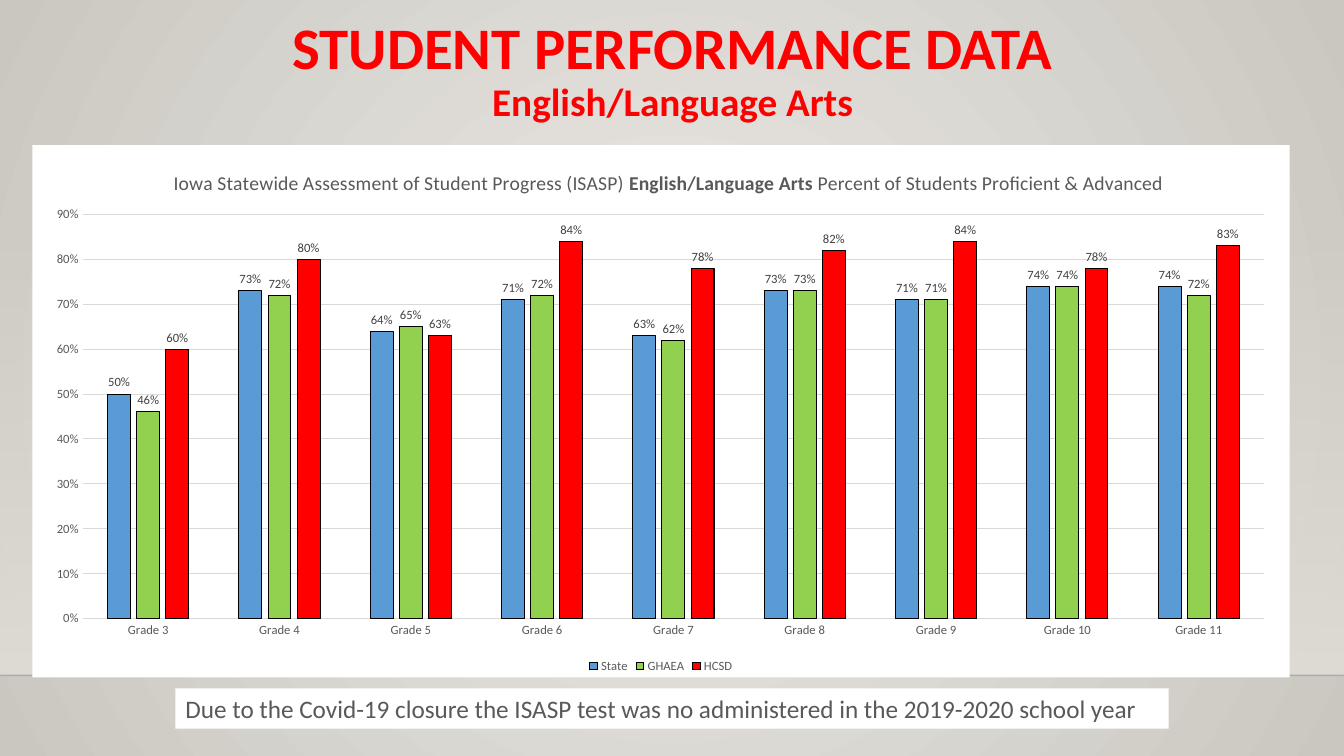
from lxml import etree
from pptx import Presentation
from pptx.chart.data import CategoryChartData
from pptx.dml.color import RGBColor
from pptx.enum.chart import XL_CHART_TYPE, XL_LABEL_POSITION, XL_LEGEND_POSITION, XL_TICK_MARK
from pptx.enum.shapes import MSO_CONNECTOR, MSO_SHAPE
from pptx.enum.text import MSO_ANCHOR, MSO_AUTO_SIZE, PP_ALIGN
from pptx.oxml.ns import qn
from pptx.util import Inches, Pt

CLUSTERED = XL_CHART_TYPE.COLUMN_CLUSTERED
OUTSIDE_END = XL_LABEL_POSITION.OUTSIDE_END
LEGEND_BOTTOM = XL_LEGEND_POSITION.BOTTOM
NO_TICK = XL_TICK_MARK.NONE
STRAIGHT = MSO_CONNECTOR.STRAIGHT
RECTANGLE = MSO_SHAPE.RECTANGLE
MIDDLE = MSO_ANCHOR.MIDDLE
CENTER = PP_ALIGN.CENTER
NO_AUTOFIT = MSO_AUTO_SIZE.NONE
GROW = MSO_AUTO_SIZE.SHAPE_TO_FIT_TEXT

FONT = "Calibri"
RED = RGBColor(0xFF, 0x00, 0x00)
BLUE = RGBColor(0x5B, 0x9B, 0xD5)
GREEN = RGBColor(0x92, 0xD0, 0x50)
WHITE = RGBColor(0xFF, 0xFF, 0xFF)
BLACK = RGBColor(0x00, 0x00, 0x00)
GREY_TEXT = RGBColor(0x59, 0x59, 0x59)
LABEL_TEXT = RGBColor(0x40, 0x40, 0x40)
GRID = RGBColor(0xD9, 0xD9, 0xD9)
GLOW = RGBColor(0xEC, 0xEA, 0xE7)
EDGE = RGBColor(0xCA, 0xC7, 0xC1)
FLOOR = RGBColor(0xDF, 0xDB, 0xD5)

WIDTH, HEIGHT = 13.33, 7.5
GRADES = [f"Grade {number}" for number in range(3, 12)]
RESULTS = [
    ("State", BLUE, (50, 73, 64, 71, 63, 73, 71, 74, 74)),
    ("GHAEA", GREEN, (46, 72, 65, 72, 62, 73, 71, 74, 72)),
    ("HCSD", RED, (60, 80, 63, 84, 78, 82, 84, 78, 83)),
]
CHART_TITLE = [
    ("Iowa Statewide Assessment of Student Progress (ISASP) ", False),
    ("English/Language Arts", True),
    (" Percent of Students Proficient & Advanced", False),
]
NOTE = ("Due to the Covid-19 closure the ISASP test was no administered "
        "in the 2019-2020 school year")


def style_font(font, size, color, bold=False):
    font.name = FONT
    font.size = Pt(size)
    font.bold = bold
    font.color.rgb = color


def style_line(line, color, width=0.75):
    line.color.rgb = color
    line.width = Pt(width)


def set_stops(fill, colors):
    fill.gradient()
    for stop, color, position in zip(fill.gradient_stops, colors, (0, 1)):
        stop.color.rgb = color
        stop.position = position


def set_alpha(color_element, percent):
    etree.SubElement(color_element, qn("a:alpha"), val=str(percent * 1000))


def set_layout(parent, index, **shares):
    for old in parent.findall(qn("c:layout")):
        parent.remove(old)
    layout = etree.Element(qn("c:layout"))
    manual = etree.SubElement(layout, qn("c:manualLayout"))
    if "w" in shares:
        etree.SubElement(manual, qn("c:layoutTarget"), val="inner")
    for mode in ("xMode", "yMode"):
        etree.SubElement(manual, qn(f"c:{mode}"), val="edge")
    for name, share in shares.items():
        etree.SubElement(manual, qn(f"c:{name}"), val=str(share))
    parent.insert(index, layout)


def paint_background(page):
    fill = page.background.fill
    set_stops(fill, (GLOW, EDGE))
    gradient = page.background._cSld.find(".//" + qn("a:gradFill"))
    gradient.remove(gradient.find(qn("a:lin")))
    circle = etree.SubElement(gradient, qn("a:path"), path="circle")
    sides = dict.fromkeys("ltrb", "50000")
    etree.SubElement(circle, qn("a:fillToRect"), **sides)


def add_floor(page, top, height):
    band = page.shapes.add_shape(RECTANGLE, 0, Inches(top), Inches(WIDTH), Inches(height))
    band.shadow.inherit = False
    band.line.fill.background()
    set_stops(band.fill, (FLOOR, FLOOR))
    band.fill.gradient_angle = 270
    set_alpha(band.element.spPr.find(".//" + qn("a:srgbClr")), 0)

    bottom = Inches(top + height)
    rule = page.shapes.add_connector(STRAIGHT, 0, bottom, Inches(WIDTH), bottom)
    style_line(rule.line, BLACK, 1)
    properties = rule.element.spPr
    set_alpha(properties.find(".//" + qn("a:srgbClr")), 20)
    etree.SubElement(properties, qn("a:effectLst"))


def add_heading(page, box):
    title = page.shapes.title
    title.left, title.top, title.width, title.height = map(Inches, box)
    frame = title.text_frame
    frame.text = "STUDENT PERFORMANCE DATA\nEnglish/Language Arts"
    frame.word_wrap = True
    frame.auto_size = NO_AUTOFIT
    frame.vertical_anchor = MIDDLE
    for para, size in zip(frame.paragraphs, (42, 28)):
        para.alignment = CENTER
        para.line_spacing = 0.9
        para.space_before = Pt(0)
        style_font(para.runs[0].font, size, RED, True)


def style_axes(chart):
    for axis in (chart.category_axis, chart.value_axis):
        axis.major_tick_mark = axis.minor_tick_mark = NO_TICK
        style_font(axis.tick_labels.font, 9, GREY_TEXT)
    style_line(chart.category_axis.format.line, GRID)
    values = chart.value_axis
    values.format.line.fill.background()
    style_line(values.major_gridlines.format.line, GRID)
    values.minimum_scale, values.maximum_scale, values.major_unit = 0, 0.9, 0.1
    values.tick_labels.number_format = "0%"
    values.tick_labels.number_format_is_linked = False


def style_series(plot):
    plot.gap_width, plot.overlap = 219, -27
    plot.vary_by_categories = False
    for series, (_, color, _) in zip(plot.series, RESULTS):
        series.format.fill.solid()
        series.format.fill.fore_color.rgb = color
        style_line(series.format.line, BLACK)
        labels = series.data_labels
        labels.show_value = True
        labels.position = OUTSIDE_END
        labels.number_format = "0%"
        labels.number_format_is_linked = False
        style_font(labels.font, 9, LABEL_TEXT)


def add_results_chart(page, box):
    data = CategoryChartData(number_format="0%")
    data.categories = GRADES
    for name, _, percents in RESULTS:
        data.add_series(name, [percent / 100 for percent in percents])
    chart = page.shapes.add_chart(CLUSTERED, *map(Inches, box), data).chart
    style_font(chart.font, 10, BLACK)

    space = chart.element
    area = etree.Element(qn("c:spPr"))
    solid = etree.SubElement(area, qn("a:solidFill"))
    etree.SubElement(solid, qn("a:srgbClr"), val=str(WHITE))
    outline = etree.SubElement(area, qn("a:ln"))
    etree.SubElement(outline, qn("a:noFill"))
    space.find(qn("c:chart")).addnext(area)

    chart.has_title = True
    para = chart.chart_title.text_frame.paragraphs[0]
    for words, bold in CHART_TITLE:
        span = para.add_run()
        span.text = words
        style_font(span.font, 14, GREY_TEXT, bold)
    chart.chart_title.include_in_layout = False
    set_layout(chart.chart_title.element, 1, x=0.11, y=0.04)
    set_layout(space.find(".//" + qn("c:plotArea")), 0, x=0.04, y=0.13, w=0.94, h=0.76)

    chart.has_legend = True
    chart.legend.position = LEGEND_BOTTOM
    chart.legend.include_in_layout = False
    style_font(chart.legend.font, 9, GREY_TEXT)
    style_axes(chart)
    style_series(chart.plots[0])


def add_note(page, box):
    note = page.shapes.add_textbox(*map(Inches, box))
    note.fill.solid()
    note.fill.fore_color.rgb = WHITE
    frame = note.text_frame
    frame.text = NOTE
    frame.word_wrap = True
    frame.auto_size = GROW
    style_font(frame.paragraphs[0].runs[0].font, 18, GREY_TEXT)


def main():
    deck = Presentation()
    deck.slide_width, deck.slide_height = Inches(WIDTH), Inches(HEIGHT)
    page = deck.slides.add_slide(deck.slide_layouts[5])
    paint_background(page)
    add_floor(page, 2.21, 4.49)
    add_heading(page, (0.92, 0.09, 11.5, 1.25))
    add_note(page, (1.74, 6.83, 9.85, 0.4))
    add_results_chart(page, (0.32, 1.44, 12.47, 5.28))
    deck.save("out.pptx")


if __name__ == "__main__":
    main()
